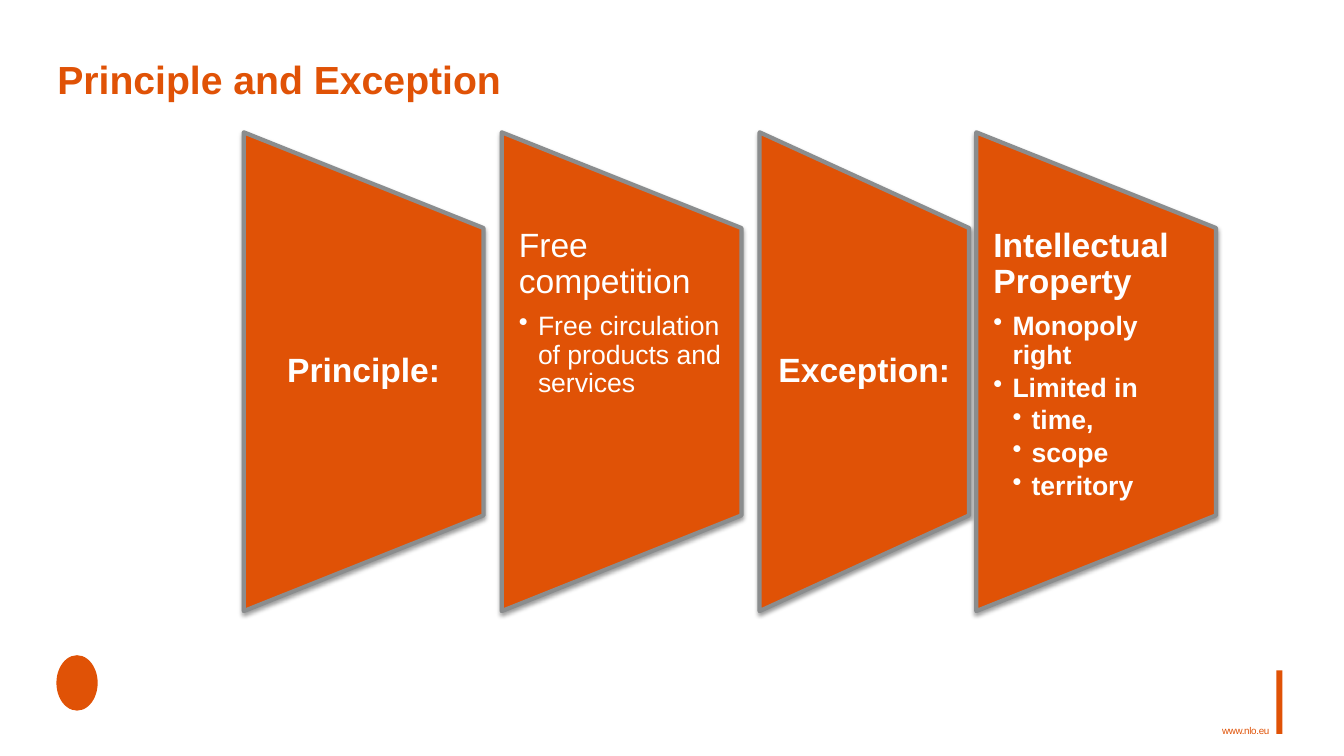
from lxml.etree import SubElement
from pptx import Presentation
from pptx.dml.color import RGBColor
from pptx.enum.shapes import MSO_SHAPE as Shape
from pptx.enum.text import MSO_ANCHOR as Anchor, PP_ALIGN as Align
from pptx.oxml.ns import qn
from pptx.util import Inches, Pt

ORANGE = RGBColor(0xE0, 0x52, 0x06)
GREY = RGBColor(0x8B, 0x8D, 0x8E)
WHITE = RGBColor(0xFF, 0xFF, 0xFF)

# Panel layout, in percent of the slide
PANEL_TOP, PANEL_HEIGHT = 17.5, 63.33
TEXT_SHARE = 0.6  # height of the text area inside a panel
FIRST_LEFT = 18.14

# Width, gap after, centred, and (level, text) lines of each panel
PANELS = [
    (17.84, 1.35, True, True, [(0, "Principle:")]),
    (17.84, 1.35, False, False, [
        (0, "Free competition"),
        (1, "Free circulation of products and services")]),
    (15.59, 0.53, True, True, [(0, "Exception:")]),
    (17.84, 0, False, True, [
        (0, "Intellectual Property"), (1, "Monopoly right"), (1, "Limited in"),
        (2, "time,"), (2, "scope"), (2, "territory")]),
]


class SlideBuilder:
    """Places styled elements; all lengths are percentages of the slide."""

    font = "Arial"
    indent = Inches(0.19)

    def __init__(self, presentation):
        self.width = presentation.slide_width
        self.height = presentation.slide_height
        self.slide = presentation.slides.add_slide(presentation.slide_layouts[6])

    def box(self, left, top, width, height):
        return (round(left * self.width / 100), round(top * self.height / 100),
                round(width * self.width / 100), round(height * self.height / 100))

    def block(self, kind, *area):
        block = self.slide.shapes.add_shape(kind, *self.box(*area))
        block.shadow.inherit = False
        block.fill.solid()
        block.fill.fore_color.rgb = ORANGE
        block.line.fill.background()
        return block

    def text(self, area, lines, sizes, color=WHITE, bold=False, centred=False,
             anchor=Anchor.TOP, inset=0):
        frame = self.slide.shapes.add_textbox(*self.box(*area)).text_frame
        frame.word_wrap = True
        frame.vertical_anchor = anchor
        frame.margin_left = frame.margin_right = Inches(inset)
        frame.margin_top = frame.margin_bottom = 0
        for number, (level, line) in enumerate(lines):
            paragraph = frame.add_paragraph() if number else frame.paragraphs[0]
            paragraph.text = line
            paragraph.alignment = Align.CENTER if centred else Align.LEFT
            paragraph.line_spacing = 0.9
            if len(lines) > 1:
                paragraph.space_after = Pt(3 if level else 8.4)
            if level:
                self.bullet(paragraph, level)
            font = paragraph.font
            font.name, font.size, font.bold = self.font, Pt(sizes[level]), bold
            font.color.rgb = color
        return frame

    def bullet(self, paragraph, level):
        paragraph.level = level
        properties = paragraph._p.get_or_add_pPr()
        properties.set("marL", str(self.indent * level))
        properties.set("indent", str(-self.indent))
        SubElement(properties, qn("a:buChar")).set("char", "•")

    def panel(self, left, width, centred, bold, lines):
        # The trapezoid is drawn lying down, then turned about its centre
        x, y, across, tall = self.box(left, PANEL_TOP, width, PANEL_HEIGHT)
        panel = self.block(Shape.FLOWCHART_MANUAL_OPERATION,
                           left, PANEL_TOP, width, PANEL_HEIGHT)
        panel.left, panel.top = x + (across - tall) // 2, y + (tall - across) // 2
        panel.width, panel.height = tall, across
        panel.rotation = 270
        panel.line.color.rgb = GREY
        panel.line.width = Pt(3)
        SubElement(panel.line._get_or_add_ln(), qn("a:round"))
        self.drop_shadow(panel)

        text_height = PANEL_HEIGHT * TEXT_SHARE
        text_top = PANEL_TOP + (PANEL_HEIGHT - text_height) / 2
        self.text((left, text_top, width, text_height), lines, (24, 19, 19),
                  bold=bold, centred=centred, inset=0.17,
                  anchor=Anchor.MIDDLE if centred else Anchor.TOP)

    def drop_shadow(self, panel):
        effects = panel._element.spPr.find(qn("a:effectLst"))
        shadow = SubElement(effects, qn("a:outerShdw"), blurRad=str(Pt(3.1)),
                            dist=str(Pt(1.6)), dir="5400000", rotWithShape="0")
        black = SubElement(shadow, qn("a:srgbClr"), val="000000")
        SubElement(black, qn("a:alpha"), val="38000")


def main():
    presentation = Presentation()
    presentation.slide_width = Inches(13.34)
    presentation.slide_height = Inches(7.5)
    builder = SlideBuilder(presentation)

    # Footer: web address, accent bar and a plain emblem
    address = builder.text((90.93, 96, 4.2, 2.27), [(0, "www.nlo.eu")], (7,), ORANGE)
    address.paragraphs[0].runs[0]._r.get_or_add_rPr().set("spc", "-20")
    builder.block(Shape.RECTANGLE, 94.98, 88.67, 0.45, 8.4)
    builder.block(Shape.OVAL, 4.2, 86.67, 3.07, 7.33)

    # Title
    builder.text((4.27, 6.93, 91.45, 7.73), [(0, "Principle and Exception")], (28,),
                 ORANGE, bold=True, anchor=Anchor.MIDDLE)

    # Panels from left to right
    left = FIRST_LEFT
    for width, gap, centred, bold, lines in PANELS:
        builder.panel(left, width, centred, bold, lines)
        left += width + gap

    presentation.save("out.pptx")


if __name__ == "__main__":
    main()
